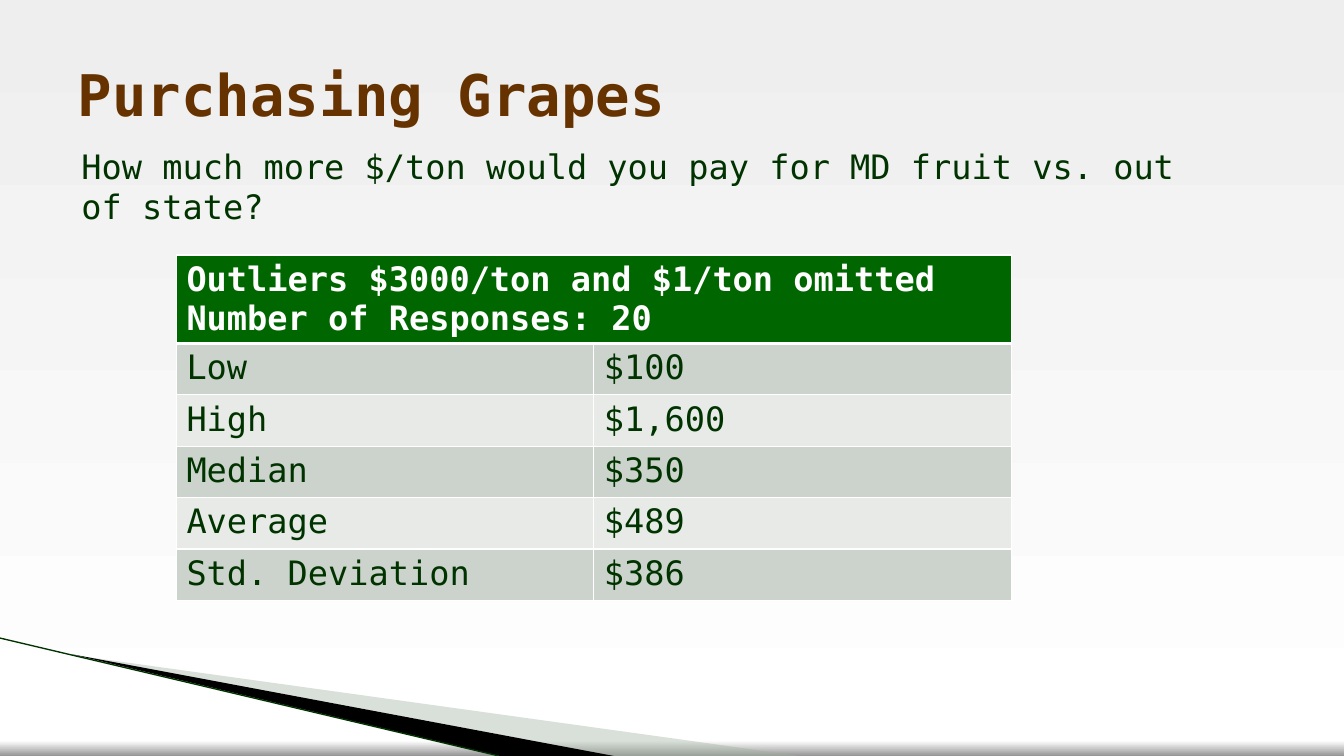
"""Build the Purchasing Grapes survey slide."""
import lxml.etree
import copy
import pptx
import pptx.dml.color
import pptx.enum.shapes
import pptx.enum.text
import pptx.oxml.ns
import pptx.util

Inches = pptx.util.Inches
qn = pptx.oxml.ns.qn
FONT = "DejaVu Sans Mono"
COLORS = {
    "title": "663300", "text": "003300", "header": "006600", "white": "FFFFFF",
    "band_dark": "CCD3CC", "band_light": "E7EAE7", "sage": "A0B2A0",
    "black": "000000", "sky": "EEEEEE", "floor": "959595",
}
HEADER = "Outliers $3000/ton and $1/ton omitted\nNumber of Responses: 20"
RESULTS = [
    ("Low", "$100"), ("High", "$1,600"), ("Median", "$350"),
    ("Average", "$489"), ("Std. Deviation", "$386"),
]


def rgb(name):
    """Return the named colour."""
    return pptx.dml.color.RGBColor.from_string(COLORS[name])


def write_text(frame, text, size=24, color="text", bold=False):
    """Fill a text frame with formatted left-aligned paragraphs."""
    frame.word_wrap = True
    frame.text = text
    for para in frame.paragraphs:
        para.alignment = pptx.enum.text.PP_ALIGN.LEFT
        for span in para.runs:
            span.font.name = FONT
            span.font.size = pptx.util.Pt(size)
            span.font.bold = bold
            span.font.color.rgb = rgb(color)


def paint_background(page):
    """Shade the page from top to bottom with three stops."""
    fill = page.background.fill
    fill.gradient()
    fill.gradient_angle = 270
    stop_list = page.element.find(".//" + qn("a:gsLst"))
    stop_list.append(copy.deepcopy(stop_list[-1]))
    stops = zip(fill.gradient_stops, [("sky", 0), ("white", 0.98), ("floor", 1)])
    for stop, (color, position) in stops:
        stop.color.rgb = rgb(color)
        stop.position = position


def add_wedge(page, points, color, opacity=100):
    """Draw a closed outline through points given in inches."""
    corners = [(Inches(x), Inches(y)) for x, y in points]
    builder = page.shapes.build_freeform(*corners[0])
    builder.add_line_segments(corners[1:], close=True)
    wedge = builder.convert_to_shape()
    wedge.shadow.inherit = False
    wedge.line.fill.background()
    wedge.fill.solid()
    wedge.fill.fore_color.rgb = rgb(color)
    if opacity < 100:
        tint = wedge.fill._xPr.find(".//" + qn("a:srgbClr"))
        lxml.etree.SubElement(tint, qn("a:alpha"), val=str(opacity * 1000))


def add_edge(page, start, end, color, width):
    """Draw a straight line between two points given in inches."""
    edge = page.shapes.add_connector(
        pptx.enum.shapes.MSO_CONNECTOR.STRAIGHT,
        *(Inches(value) for value in start + end))
    edge.line.color.rgb = rgb(color)
    edge.line.width = pptx.util.Pt(width)
    lxml.etree.SubElement(edge.element.spPr, qn("a:effectLst"))


def style_cell(cell, fill, bottom=1):
    """Give a cell white borders and a plain fill."""
    properties = cell._tc.get_or_add_tcPr()
    for side, width in (("L", 1), ("R", 1), ("T", 1), ("B", bottom)):
        border = lxml.etree.SubElement(
            properties, qn("a:ln" + side), w=str(pptx.util.Pt(width)))
        solid = lxml.etree.SubElement(border, qn("a:solidFill"))
        lxml.etree.SubElement(solid, qn("a:srgbClr"), val=COLORS["white"])
    cell.fill.solid()
    cell.fill.fore_color.rgb = rgb(fill)


def add_results(page):
    """Add the table of survey results under a merged header."""
    table = page.shapes.add_table(
        len(RESULTS) + 1, 2, Inches(1.75), Inches(2.53), Inches(8.28), Inches(3.43)).table
    for row in table.rows:
        row.height = Inches(0.51)
    table.rows[0].height = Inches(0.87)
    for column in range(2):
        style_cell(table.cell(0, column), "header", bottom=3)
    table.cell(0, 0).merge(table.cell(0, 1))
    write_text(table.cell(0, 0).text_frame, HEADER, color="white", bold=True)
    for row, values in enumerate(RESULTS, start=1):
        for column, value in enumerate(values):
            cell = table.cell(row, column)
            style_cell(cell, "band_dark" if row % 2 else "band_light")
            write_text(cell.text_frame, value)


def add_title(page, text):
    """Place and format the title placeholder."""
    title = page.shapes.title
    title.left, title.top = Inches(0.67), Inches(0.3)
    title.width, title.height = Inches(12), Inches(1.25)
    title.text_frame.vertical_anchor = pptx.enum.text.MSO_ANCHOR.MIDDLE
    write_text(title.text_frame, text, size=41, color="title", bold=True)


def add_question(page, text):
    """Add the survey question below the title."""
    box = page.shapes.add_textbox(Inches(0.71), Inches(1.4), Inches(11.11), Inches(0.5))
    write_text(box.text_frame, text)


def main():
    """Build and save the deck."""
    deck = pptx.Presentation()
    deck.slide_width, deck.slide_height = Inches(13.33), Inches(7.5)
    page = deck.slides.add_slide(deck.slide_layouts[5])
    paint_background(page)
    add_wedge(page, [(0.73, 6.5), (7.93, 7.5), (6.08, 7.5)], "sage", opacity=40)
    add_wedge(page, [(0.71, 6.49), (6.09, 7.5), (4.96, 7.5)], "black")
    add_edge(page, (0, 6.33), (4.95, 7.5), "text", 0.95)
    add_results(page)
    add_title(page, "Purchasing Grapes")
    add_question(page, "How much more $/ton would you pay for MD fruit vs. out of state?")
    deck.save("out.pptx")


if __name__ == "__main__":
    main()
